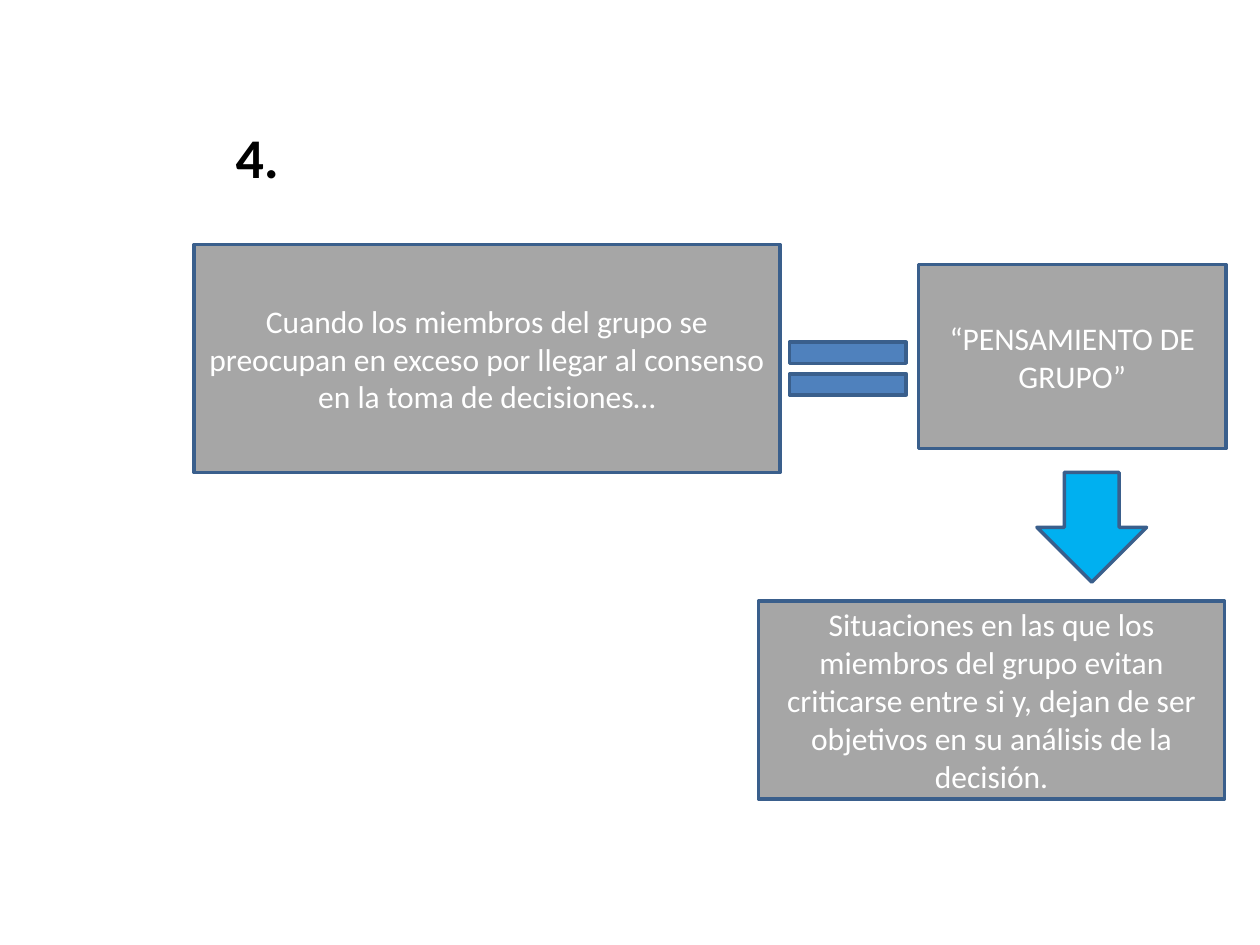
from pptx import Presentation
from pptx.dml.color import RGBColor
from pptx.enum.shapes import MSO_SHAPE
from pptx.enum.text import MSO_ANCHOR, PP_ALIGN
from pptx.util import Inches, Pt

COLORS = {
    "panel": "A6A6A6",
    "outline": "3A5F8C",
    "equals": "4F81BD",
    "arrow": "00B0F0",
    "light": "FFFFFF",
    "dark": "000000",
}
FONT = "Calibri"


def color(key):
    """Return the palette colour for a key."""
    return RGBColor.from_string(COLORS[key])


def write_text(frame, text, *, size=18, ink="light", bold=False,
               align=PP_ALIGN.CENTER, anchor=MSO_ANCHOR.MIDDLE, wrap=True):
    """Write one formatted paragraph into a text frame."""
    frame.word_wrap = wrap
    frame.vertical_anchor = anchor
    frame.margin_left = frame.margin_right = Inches(0.1)
    frame.margin_top = frame.margin_bottom = Inches(0.05)
    paragraph = frame.paragraphs[0]
    paragraph.alignment = align
    run = paragraph.add_run()
    run.text = text
    run.font.name = FONT
    run.font.size = Pt(size)
    run.font.bold = bold
    run.font.color.rgb = color(ink)


def add_outlined(slide, preset, box, fill):
    """Add a filled preset shape with the common outline."""
    outlined = slide.shapes.add_shape(preset, *map(Inches, box))
    outlined.shadow.inherit = False
    outlined.fill.solid()
    outlined.fill.fore_color.rgb = color(fill)
    outlined.line.color.rgb = color("outline")
    outlined.line.width = Pt(2)
    return outlined


def add_panel(slide, box, text):
    """Add a grey panel holding a centred statement."""
    panel = add_outlined(slide, MSO_SHAPE.RECTANGLE, box, "panel")
    write_text(panel.text_frame, text)


def add_heading(slide, box, text):
    """Move the title placeholder to the box and write the item number."""
    heading = slide.shapes.title
    heading.left, heading.top, heading.width, heading.height = map(Inches, box)
    write_text(heading.text_frame, text, size=32, ink="dark", bold=True,
               align=PP_ALIGN.LEFT, anchor=MSO_ANCHOR.TOP, wrap=False)


def main():
    """Build the groupthink slide and save it."""
    deck = Presentation()
    deck.slide_width, deck.slide_height = Inches(10), Inches(7.5)
    slide = deck.slides.add_slide(deck.slide_layouts[5])

    add_heading(slide, (1.77, 0.92, 0.55, 0.64), "4.")
    add_panel(slide, (1.54, 1.94, 4.65, 1.81),
              "Cuando los miembros del grupo se preocupan en exceso por "
              "llegar al consenso en la toma de decisiones…")
    add_outlined(slide, MSO_SHAPE.MATH_EQUAL, (6.1, 2.57, 1.26, 0.71), "equals")
    add_panel(slide, (7.29, 2.1, 2.44, 1.46), "“PENSAMIENTO DE GRUPO”")
    add_panel(slide, (6.02, 4.77, 3.7, 1.57),
              "Situaciones en las que los miembros del grupo evitan criticarse "
              "entre si y, dejan de ser objetivos en su análisis de la decisión.")
    add_outlined(slide, MSO_SHAPE.DOWN_ARROW, (8.23, 3.75, 0.87, 0.87), "arrow")

    deck.save("out.pptx")


if __name__ == "__main__":
    main()
